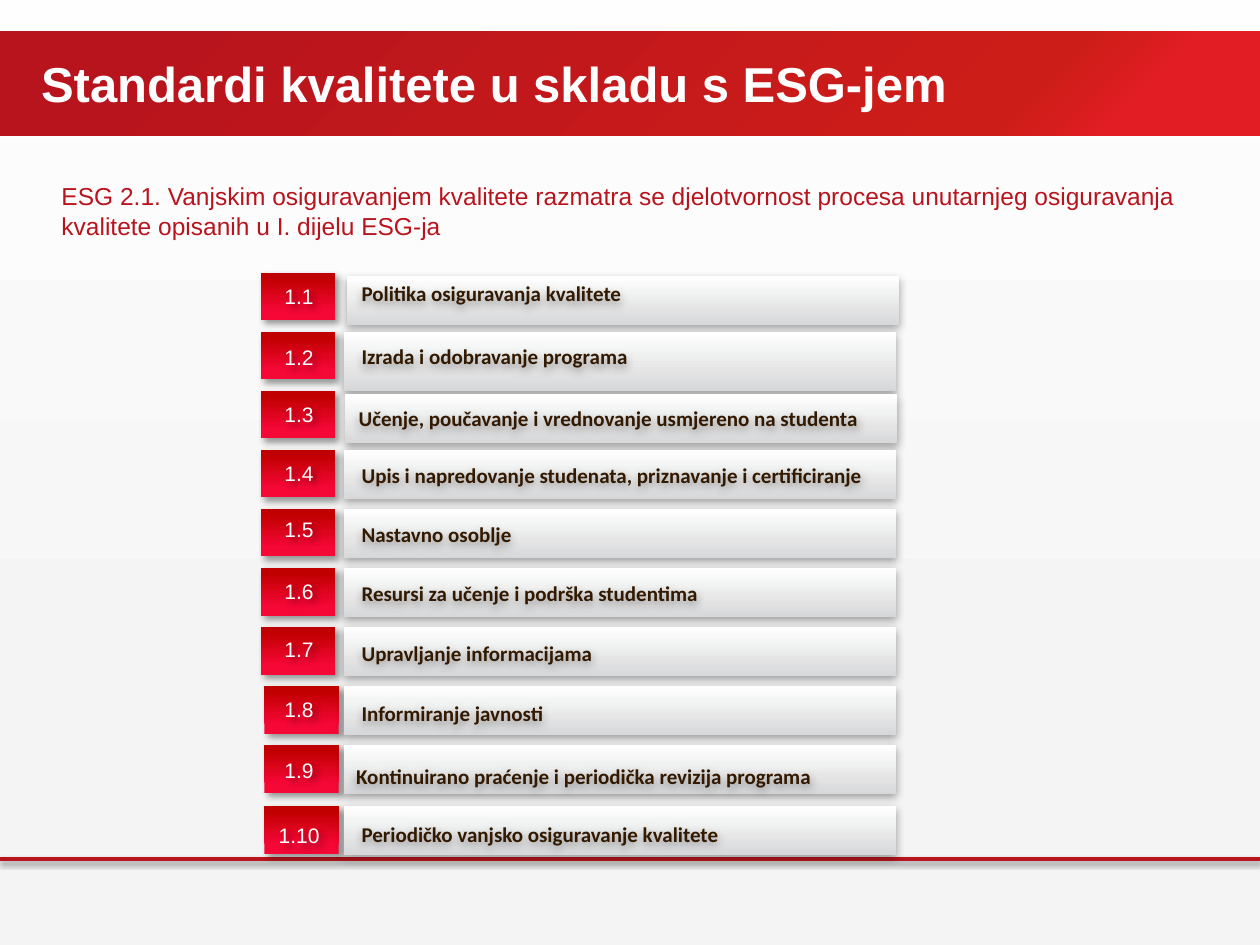
"""Build the slide listing the ten ESG quality standards."""
import pptx
import pptx.dml.color
import pptx.enum.shapes
import pptx.enum.text
import pptx.oxml.ns
import pptx.util
from lxml import etree
from pptx.util import Cm

TITLE = "Standardi kvalitete u skladu s ESG-jem"
INTRO = [
    "ESG 2.1. Vanjskim osiguravanjem kvalitete razmatra se djelotvornost procesa unutarnjeg osiguravanja",
    "kvalitete opisanih u I. dijelu ESG-ja",
]
STANDARDS = [
    {"number": "1.1", "label": "Politika osiguravanja kvalitete",
     "number_dy": 0.1, "label_dy": 0.04, "bar_dx": 0.06, "bar_dy": 0.06},
    {"number": "1.2", "label": "Izrada i odobravanje programa",
     "number_dy": 0.14, "label_dy": 0.12, "bar_height": 1.19},
    {"number": "1.3", "label": "Učenje, poučavanje i vrednovanje usmjereno na studenta",
     "number_dy": 0.09, "label_dy": 0.17, "label_dx": -0.06, "bar_dx": 0.03, "bar_dy": 0.07},
    {"number": "1.4", "label": "Upis i napredovanje studenata, priznavanje i certificiranje",
     "number_dy": 0.08, "label_dy": 0.12},
    {"number": "1.5", "label": "Nastavno osoblje", "number_dy": 0.02, "label_dy": 0.13},
    {"number": "1.6", "label": "Resursi za učenje i podrška studentima",
     "number_dy": 0.08, "label_dy": 0.13},
    {"number": "1.7", "label": "Upravljanje informacijama", "number_dy": 0.06, "label_dy": 0.14},
    {"number": "1.8", "label": "Informiranje javnosti",
     "number_dy": 0.09, "label_dy": 0.17, "tile_dx": 0.07},
    {"number": "1.9", "label": "Kontinuirano praćenje i periodička revizija programa",
     "number_dy": 0.12, "label_dy": 0.25, "label_dx": -0.11, "tile_dx": 0.07},
    {"number": "1.10", "label": "Periodičko vanjsko osiguravanje kvalitete",
     "number_dy": 0.25, "label_dy": 0.22, "tile_dx": 0.07, "tile_dy": 0.04, "bar_dy": 0.04},
]
FIRST_TOP, PITCH = 5.5, 1.19
TILE_LEFT, NUMBER_LEFT, BAR_LEFT, LABEL_LEFT = 5.26, 5.33, 6.93, 7.04
BAR_WIDTH = 11.13

BACKDROP = ([(0, "FEFEFE"), (74, "F4F4F4"), (83, "F4F4F4"), (100, "F7F7F7")], 90)
BAND = ([(11, "E21D24"), (20, "CD1D19"), (89, "B8141D")], 225)
TILE = ([(11, "F50736"), (20, "F50736"), (89, "C00000")], 270)
BAR = ([(0, "D7D8D9"), (100, "FFFFFF")], 270)
TILE_SHADOW = {"opacity": 40, "blur": 4, "distance": 3, "angle": 45}
BAR_SHADOW = {"opacity": 35, "blur": 5, "distance": 1.8, "angle": 90}
RULE_SHADOW = {"opacity": 38, "blur": 3.1, "distance": 1.6, "angle": 90}

qn = pptx.oxml.ns.qn
ALIGN = pptx.enum.text.PP_ALIGN
ANCHOR = pptx.enum.text.MSO_ANCHOR


def color(value):
    return pptx.dml.color.RGBColor.from_string(value)


def sub(parent, tag, **attributes):
    return etree.SubElement(parent, qn(tag), {k: str(v) for k, v in attributes.items()})


def paint(fill, holder, gradient):
    stops, angle = gradient
    fill.gradient()
    grad = holder.find(".//" + qn("a:gradFill"))
    stop_list = grad.find(qn("a:gsLst"))
    for stop in list(stop_list):
        stop_list.remove(stop)
    for position, value in stops:
        sub(sub(stop_list, "a:gs", pos=position * 1000), "a:srgbClr", val=value)
    grad.find(qn("a:lin")).set("ang", str(angle * 60000))


def cast_shadow(shape, opacity, blur, distance, angle):
    effects = sub(shape._element.spPr, "a:effectLst")
    shadow = sub(effects, "a:outerShdw", blurRad=int(pptx.util.Pt(blur)),
                 dist=int(pptx.util.Pt(distance)), dir=angle * 60000, algn="tl", rotWithShape=0)
    sub(sub(shadow, "a:srgbClr", val="000000"), "a:alpha", val=opacity * 1000)


def add_panel(slide, left, top, width, height, gradient, shadow=None):
    panel = slide.shapes.add_shape(pptx.enum.shapes.MSO_SHAPE.RECTANGLE,
                                   Cm(left), Cm(top), Cm(width), Cm(height))
    paint(panel.fill, panel._element, gradient)
    panel.line.fill.background()
    if shadow:
        cast_shadow(panel, **shadow)
    else:
        panel.shadow.inherit = False


def add_text(slide, lines, left, top, width, height, *, size, ink, font="Arial", bold=False,
             align=ALIGN.LEFT, anchor=ANCHOR.TOP, wrap=True, shadow=None):
    box = slide.shapes.add_textbox(Cm(left), Cm(top), Cm(width), Cm(height))
    frame = box.text_frame
    frame.word_wrap = wrap
    frame.vertical_anchor = anchor
    frame.text = "\n".join(lines)
    for paragraph in frame.paragraphs:
        paragraph.alignment = align
        paragraph.font.name = font
        paragraph.font.size = pptx.util.Pt(size)
        paragraph.font.bold = bold
        paragraph.font.color.rgb = color(ink)
    if shadow:
        cast_shadow(box, **shadow)


def add_standard(slide, top, standard):
    get = standard.get
    add_panel(slide, TILE_LEFT + get("tile_dx", 0), top + get("tile_dy", 0),
              1.5, 0.96, TILE, TILE_SHADOW)
    add_panel(slide, BAR_LEFT + get("bar_dx", 0), top + get("bar_dy", 0),
              BAR_WIDTH, get("bar_height", 0.99), BAR, BAR_SHADOW)
    add_text(slide, [standard["number"]], NUMBER_LEFT, top + standard["number_dy"], 1.4, 0.77,
             size=12, ink="FFFFFF", align=ALIGN.CENTER, shadow=TILE_SHADOW)
    add_text(slide, [standard["label"]], LABEL_LEFT + get("label_dx", 0),
             top + standard["label_dy"], BAR_WIDTH, 0.77,
             size=12, ink="321900", font="Calibri", bold=True, shadow=BAR_SHADOW)


def main():
    deck = pptx.Presentation()
    deck.slide_width, deck.slide_height = Cm(25.4), Cm(19.05)
    slide = deck.slides.add_slide(deck.slide_layouts[6])
    paint(slide.background.fill, slide._element, BACKDROP)

    add_panel(slide, 0, 0.63, 25.4, 2.11, BAND)
    rule = slide.shapes.add_connector(pptx.enum.shapes.MSO_CONNECTOR.STRAIGHT,
                                      Cm(0), Cm(17.32), Cm(25.4), Cm(17.32))
    rule.line.color.rgb = color("B8141D")
    rule.line.width = pptx.util.Pt(2)
    cast_shadow(rule, **RULE_SHADOW)

    add_text(slide, [TITLE], 0.58, 0.84, 20.8, 1.65,
             size=28, ink="FFFFFF", bold=True, anchor=ANCHOR.MIDDLE)
    add_text(slide, INTRO, 0.99, 3.53, 23.06, 1.45, size=14, ink="B8141D", wrap=False)
    for row, standard in enumerate(STANDARDS):
        add_standard(slide, FIRST_TOP + row * PITCH, standard)
    deck.save("out.pptx")


if __name__ == "__main__":
    main()
